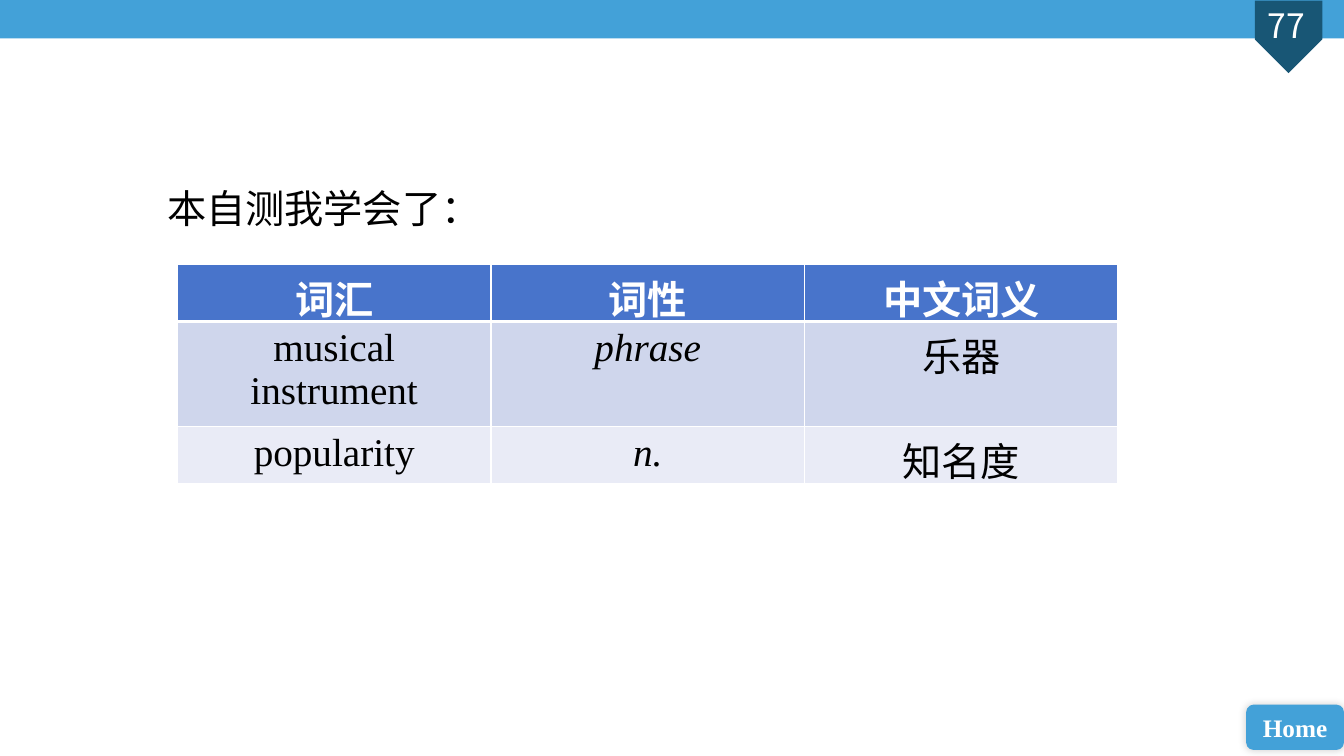
import pptx
import pptx.util
import pptx.dml.color
import pptx.enum.shapes
import pptx.enum.text
import pptx.oxml
import pptx.oxml.ns

Inches = pptx.util.Inches
SHAPE = pptx.enum.shapes.MSO_SHAPE
ALIGN = pptx.enum.text.PP_ALIGN
WIDTH, HEIGHT = 13.33, 7.5
SKY, NAVY, WHITE, BLACK = "43A1D8", "185675", "FFFFFF", "000000"
HEADER_FILL, BAND_FILLS = "4874CB", ("CFD6EC", "E9EBF6")
NAMESPACE = pptx.oxml.ns.nsdecls("a")


def paint(fill, color):
    fill.solid()
    fill.fore_color.rgb = pptx.dml.color.RGBColor.from_string(color)


def write(frame, text, size, font_name, color, align=ALIGN.CENTER, bold=False, italic=False):
    frame.word_wrap = True
    paragraph = frame.paragraphs[0]
    paragraph.text = text
    paragraph.alignment = align
    font = paragraph.font
    font.size, font.name = pptx.util.Pt(size), font_name
    font.bold, font.italic = bold, italic
    paint(font.fill, color)


presentation = pptx.Presentation()
presentation.slide_width, presentation.slide_height = Inches(WIDTH), Inches(HEIGHT)
slide = presentation.slides.add_slide(presentation.slide_layouts[6])

# Top bar, page marker and home button
decorations = []
for kind, left, top, width, height, color in (
    (SHAPE.RECTANGLE, 0, 0, WIDTH, 0.38, SKY),
    (SHAPE.PENTAGON, 12.42, 0.03, 0.72, 0.67, NAVY),
    (SHAPE.ROUNDED_RECTANGLE, 12.36, 6.99, 0.97, 0.45, SKY),
):
    shape = slide.shapes.add_shape(kind, Inches(left), Inches(top), Inches(width), Inches(height))
    shape.shadow.inherit = False
    shape.line.fill.background()
    paint(shape.fill, color)
    decorations.append(shape)
top_bar, page_marker, home = decorations
page_marker.rotation = 90

home.text_frame.vertical_anchor = pptx.enum.text.MSO_ANCHOR.MIDDLE
write(home.text_frame, "Home", 18, "Times New Roman", WHITE, bold=True)
effects = home._element.spPr.find(pptx.oxml.ns.qn("a:effectLst"))
effects.append(pptx.oxml.parse_xml(
    f'<a:outerShdw {NAMESPACE} blurRad="{pptx.util.Pt(6)}" dist="0" dir="18900000">'
    '<a:srgbClr val="000000"><a:alpha val="20000"/></a:srgbClr></a:outerShdw>'))

# Page number and heading
for text, left, top, width, height, size, font_name, color, align in (
    ("77", 12.27, 0, 0.98, 0.5, 24, "Noto Sans CJK SC", WHITE, ALIGN.CENTER),
    ("本自测我学会了：", 1.56, 1.78, 3.87, 0.57, 28, "Calibri", BLACK, ALIGN.LEFT),
):
    box = slide.shapes.add_textbox(Inches(left), Inches(top), Inches(width), Inches(height))
    write(box.text_frame, text, size, font_name, color, align)

# Vocabulary table
vocabulary = (
    ("词汇", "词性", "中文词义"),
    ("musical instrument", "phrase", "乐器"),
    ("popularity", "n.", "知名度"),
)
row_heights = (0.57, 1.04, 0.57)
table = slide.shapes.add_table(
    len(vocabulary), 3, Inches(1.76), Inches(2.62), Inches(9.33), Inches(sum(row_heights))).table
for row_index, (words, row_height) in enumerate(zip(vocabulary, row_heights)):
    table.rows[row_index].height = Inches(row_height)
    is_header = row_index == 0
    border_widths = {"lnL": 1, "lnR": 1, "lnT": 3 if row_index == 1 else 1, "lnB": 3 if is_header else 1}
    for column_index, word in enumerate(words):
        cell = table.cell(row_index, column_index)
        paint(cell.fill, HEADER_FILL if is_header else BAND_FILLS[row_index - 1])
        write(cell.text_frame, word, 28, "Times New Roman", WHITE if is_header else BLACK,
              bold=is_header, italic=not is_header and column_index == 1)
        properties = cell._tc.get_or_add_tcPr()
        for position, (side, points) in enumerate(border_widths.items()):
            properties.insert(position, pptx.oxml.parse_xml(
                f'<a:{side} {NAMESPACE} w="{pptx.util.Pt(points)}"><a:solidFill>'
                f'<a:srgbClr val="{WHITE}"/></a:solidFill></a:{side}>'))

presentation.save("out.pptx")
